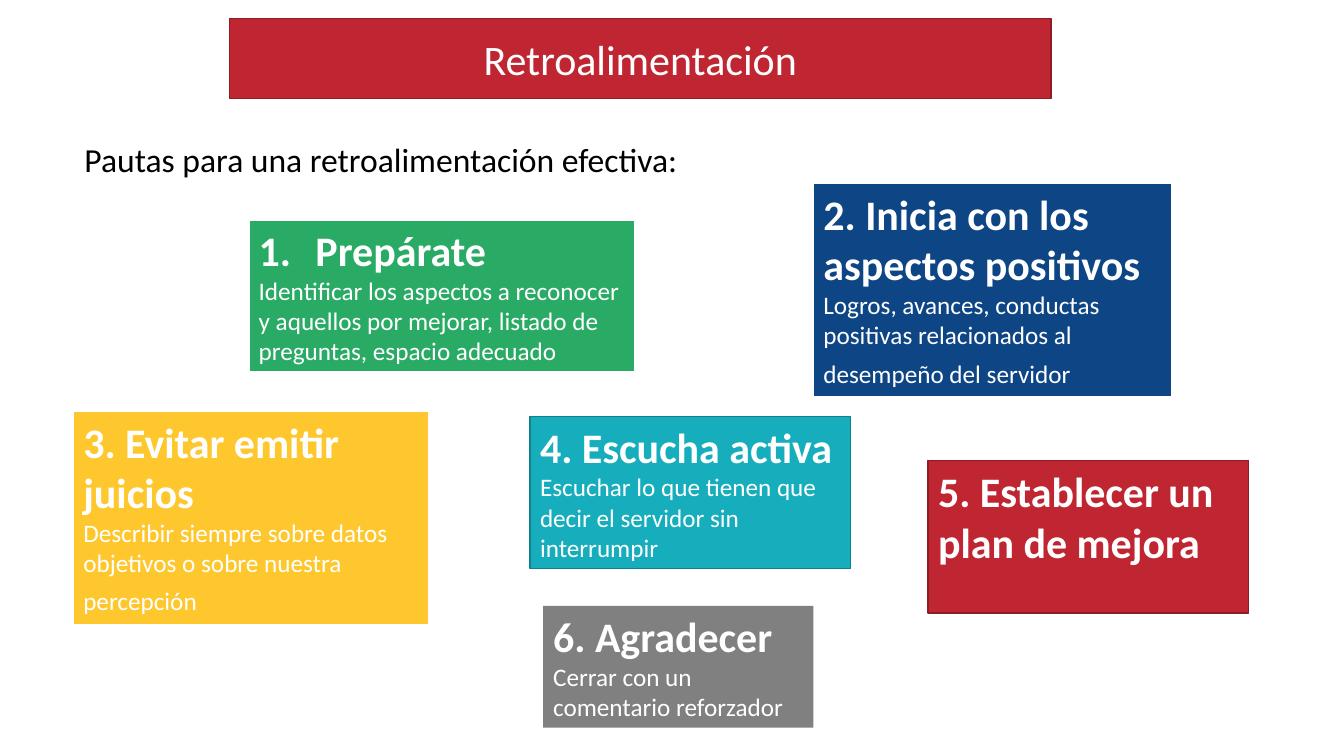
from lxml import etree
from pptx import Presentation
from pptx.dml.color import RGBColor
from pptx.enum.shapes import MSO_SHAPE
from pptx.enum.text import MSO_ANCHOR, MSO_AUTO_SIZE, PP_ALIGN
from pptx.oxml.ns import qn
from pptx.util import Cm, Pt

RECT = MSO_SHAPE.RECTANGLE
TOP, MIDDLE = MSO_ANCHOR.TOP, MSO_ANCHOR.MIDDLE
LEFT, CENTER = PP_ALIGN.LEFT, PP_ALIGN.CENTER
FIXED = MSO_AUTO_SIZE.NONE

WHITE = RGBColor(0xFF, 0xFF, 0xFF)
BLACK = RGBColor(0, 0, 0)
GREEN = RGBColor(0x2A, 0xAB, 0x65)
BLUE = RGBColor(0x0E, 0x45, 0x84)
YELLOW = RGBColor(0xFD, 0xC7, 0x2D)
TEAL = RGBColor(0x16, 0xAD, 0xBD)
DARK_TEAL = RGBColor(0x10, 0x80, 0x8C)
RED = RGBColor(0xBF, 0x26, 0x32)
DARK_RED = RGBColor(0x8D, 0x1C, 0x25)
GRAY = RGBColor(0x80, 0x80, 0x80)

FONT = "Calibri"
HEAD, LEAD, BODY = 30, 24, 18

# box in cm, fill, line, line width, heading, body, size of the closing space
STEPS = [
    ((6.27, 5.54, 9.73, 3.84), GREEN, WHITE, 1.5, "Prepárate",
     "Identificar los aspectos a reconocer y aquellos por mejorar, "
     "listado de preguntas, espacio adecuado", None),
    ((20.5, 4.62, 9.04, 5.38), BLUE, WHITE, 1.5,
     "2. Inicia con los aspectos positivos",
     "Logros, avances, conductas positivas relacionados al "
     "desempeño del servidor", LEAD),
    ((1.85, 10.36, 8.97, 5.38), YELLOW, WHITE, 1.5,
     "3. Evitar emitir juicios",
     "Describir siempre sobre datos objetivos o sobre nuestra percepción",
     LEAD),
    ((13.36, 10.49, 8.08, 3.84), TEAL, DARK_TEAL, 1, "4. Escucha activa",
     "Escuchar lo que tienen que decir el servidor sin interrumpir", None),
    ((23.39, 11.61, 8.08, 3.84), RED, DARK_RED, 1,
     "5. Establecer un plan de mejora", None, None),
    ((13.69, 15.27, 6.81, 3.07), GRAY, None, None, "6. Agradecer",
     "Cerrar con un comentario reforzador", None),
]


def style(para, size, color=WHITE, bold=False, align=LEFT):
    para.alignment = align
    font = para.font
    font.name, font.size, font.bold = FONT, Pt(size), bold
    font.color.rgb = color


def paint(shape, fill, line, width):
    shape.fill.solid()
    shape.fill.fore_color.rgb = fill
    if line is None:
        shape.line.fill.background()
    else:
        shape.line.color.rgb = line
        shape.line.width = Pt(width)


def number(para):
    """Give the paragraph an automatic number with a hanging indent."""
    props = para._p.get_or_add_pPr()
    props.set("marL", str(Cm(1.43)))
    props.set("indent", str(-Cm(1.43)))
    etree.SubElement(props, qn("a:buAutoNum"), type="arabicPeriod")


def add_title(slide, box):
    title = slide.shapes.title
    title.left, title.top, title.width, title.height = map(Cm, box)
    geom = etree.SubElement(title._element.spPr, qn("a:prstGeom"),
                            prst="roundRect")
    etree.SubElement(geom, qn("a:avLst"))
    paint(title, RED, DARK_RED, 1)
    frame = title.text_frame
    frame.text = "Retroalimentación"
    frame.auto_size = FIXED
    frame.vertical_anchor = MIDDLE
    style(frame.paragraphs[0], HEAD, align=CENTER)


def add_lead(slide, box):
    frame = slide.shapes.add_textbox(*map(Cm, box)).text_frame
    frame.word_wrap = True
    frame.text = "Pautas para una retroalimentación efectiva:"
    style(frame.paragraphs[0], LEAD, BLACK)


def add_step(slide, box, fill, line, width, head, body, tail):
    shape = slide.shapes.add_shape(RECT, *map(Cm, box))
    shape.shadow.inherit = False
    paint(shape, fill, line, width)
    frame = shape.text_frame
    frame.word_wrap = True
    frame.auto_size = FIXED
    frame.vertical_anchor = TOP
    para = frame.paragraphs[0]
    para.text = head
    if not head[0].isdigit():
        number(para)
    style(para, HEAD, bold=True)
    if body:
        para = frame.add_paragraph()
        para.text = body
        style(para, BODY)
        if tail:
            run = para.add_run()
            run.text = " "
            run.font.size = Pt(tail)


def main():
    deck = Presentation()
    deck.slide_width, deck.slide_height = Cm(33.87), Cm(19.05)
    slide = deck.slides.add_slide(deck.slide_layouts[5])
    add_title(slide, (5.79, 0.46, 20.7, 2.03))
    add_lead(slide, (1.88, 3.38, 18.62, 1.27))
    for step in STEPS:
        add_step(slide, *step)
    deck.save("out.pptx")


if __name__ == "__main__":
    main()
